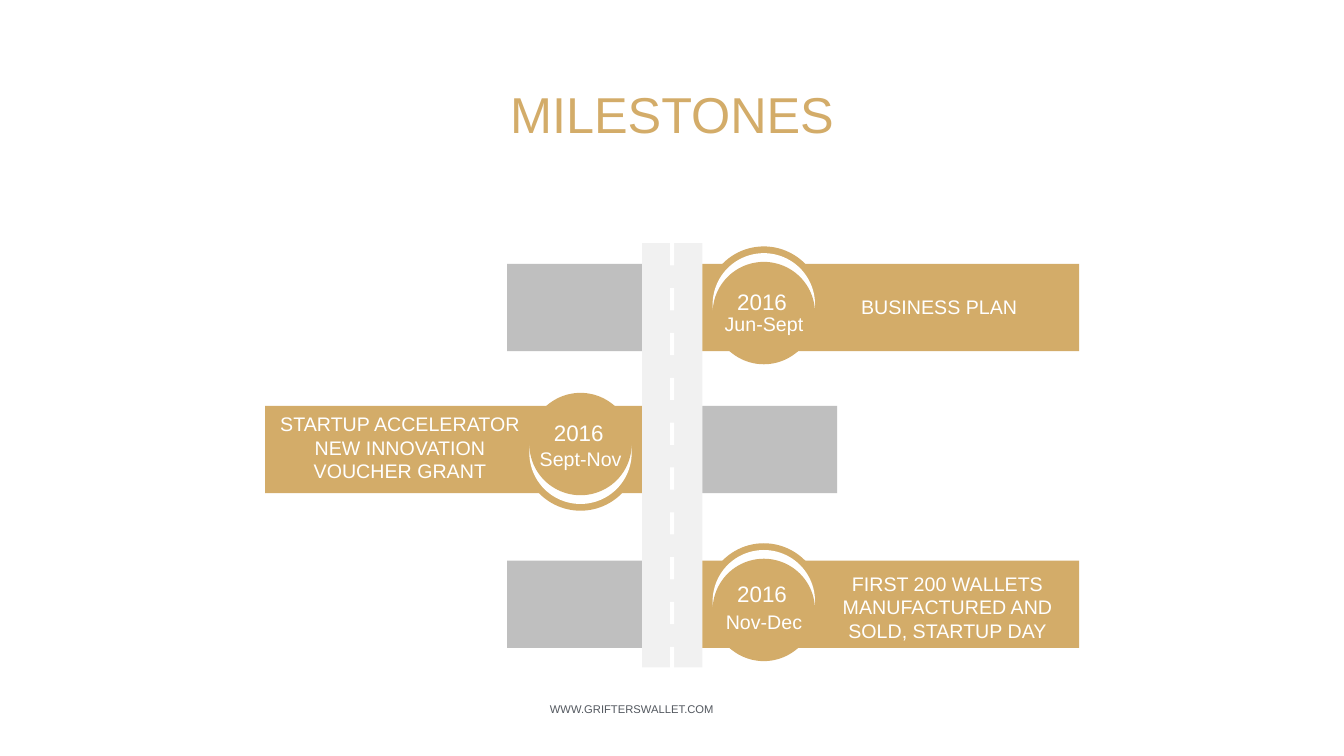
from pptx import Presentation
from pptx.dml.color import RGBColor
from pptx.enum import shapes, text
from pptx.util import Cm, Pt

GOLD = RGBColor(0xD3, 0xAC, 0x69)
GREY = RGBColor(0xBF, 0xBF, 0xBF)
ROAD = RGBColor(0xF1, 0xF1, 0xF1)
SLATE = RGBColor(0x53, 0x58, 0x5F)
WHITE = RGBColor(0xFF, 0xFF, 0xFF)

RECT = shapes.MSO_SHAPE.RECTANGLE
OVAL = shapes.MSO_SHAPE.OVAL

# All lengths in centimetres
ROAD_CENTRE, ROAD_W = 16.94, 1.52
BAND_H, GOLD_W, GREY_W = 2.2, 9.5, 3.4
BADGE_DX = 2.31
RING_R, DISC_R = 1.46, 1.29
RING_DY, DISC_DY = 1.02, 1.24
LABEL_W = 6.15

# side (1 right, -1 left), band top, year top, months, months top,
# label, label top, label centre
MILESTONES = [
    (1, 6.65, 7.26, "Jun-Sept", 7.87, "BUSINESS PLAN", 7.44, 23.67),
    (-1, 10.23, 10.57, "Sept-Nov", 11.25,
     "STARTUP ACCELERATOR\nNEW INNOVATION VOUCHER GRANT", 10.39, 10.08),
    (1, 14.13, 14.61, "Nov-Dec", 15.37,
     "FIRST 200 WALLETS MANUFACTURED AND SOLD, STARTUP DAY", 14.4, 23.88),
]


def add_text(s, content, x, y, w, h, size=14, color=WHITE,
             anchor=text.MSO_ANCHOR.TOP, spacing=None):
    tf = s.shapes.add_textbox(Cm(x), Cm(y), Cm(w), Cm(h)).text_frame
    tf.word_wrap = True
    tf.vertical_anchor = anchor
    tf.margin_left = tf.margin_right = tf.margin_top = tf.margin_bottom = 0
    p = tf.paragraphs[0]
    p.text = content
    p.alignment = text.PP_ALIGN.CENTER
    p.line_spacing = spacing
    for r in p.runs:
        r.font.name = "Arial"
        r.font.size = Pt(size)
        r.font.color.rgb = color


def add_filled(s, kind, x, y, w, h, color):
    sp = s.shapes.add_shape(kind, Cm(x), Cm(y), Cm(w), Cm(h))
    sp.shadow.inherit = False
    sp.fill.solid()
    sp.fill.fore_color.rgb = color
    sp.line.fill.background()


def add_circle(s, cx, cy, radius, color):
    add_filled(s, OVAL, cx - radius, cy - radius, 2 * radius, 2 * radius, color)


def add_band(s, side, top, width, color):
    """Bar that starts at the road's edge and runs out to the given side."""
    edge = ROAD_CENTRE + side * ROAD_W / 2
    left = edge if side > 0 else edge - width
    add_filled(s, RECT, left, top, width, BAND_H, color)


def add_badge(s, cx, side, top):
    """Ring and disc whose offset leaves a white crescent between them."""
    middle = top + BAND_H / 2
    ring_y = middle + side * (RING_DY - BAND_H / 2)
    disc_y = middle + side * (DISC_DY - BAND_H / 2)
    add_circle(s, cx, ring_y, RING_R, GOLD)
    add_circle(s, cx, ring_y, DISC_R, WHITE)
    add_circle(s, cx, disc_y, DISC_R, GOLD)


def add_milestone(s, side, top, year_top, months, months_top,
                  label, label_top, label_centre):
    cx = ROAD_CENTRE + side * BADGE_DX
    add_band(s, side, top, GOLD_W, GOLD)
    add_band(s, -side, top, GREY_W, GREY)
    add_badge(s, cx, side, top)
    add_text(s, "2016", cx - 1.33, year_top, 2.57, 0.68, size=16)
    add_text(s, months, cx - 1.28, months_top, 2.57, 0.6)
    add_text(s, label, label_centre - LABEL_W / 2, label_top, LABEL_W, 1.8)


def add_road(s):
    add_filled(s, RECT, ROAD_CENTRE - ROAD_W / 2, 6.13, ROAD_W, 10.69, ROAD)
    for i in range(10):
        add_filled(s, RECT, ROAD_CENTRE - 0.05, 6.13 + i * 1.13, 0.1, 0.56, WHITE)


def main():
    prs = Presentation()
    prs.slide_width, prs.slide_height = Cm(33.87), Cm(19.05)
    s = prs.slides.add_slide(prs.slide_layouts[6])
    add_text(s, "MILESTONES", 6.17, 1.91, 21.54, 2.08, size=36, color=GOLD,
             anchor=text.MSO_ANCHOR.MIDDLE, spacing=0.9)
    add_road(s)
    for milestone in MILESTONES:
        add_milestone(s, *milestone)
    add_text(s, "WWW.GRIFTERSWALLET.COM", 13.26, 17.7, 5.33, 0.33,
             size=8, color=SLATE)
    prs.save("out.pptx")


if __name__ == "__main__":
    main()
